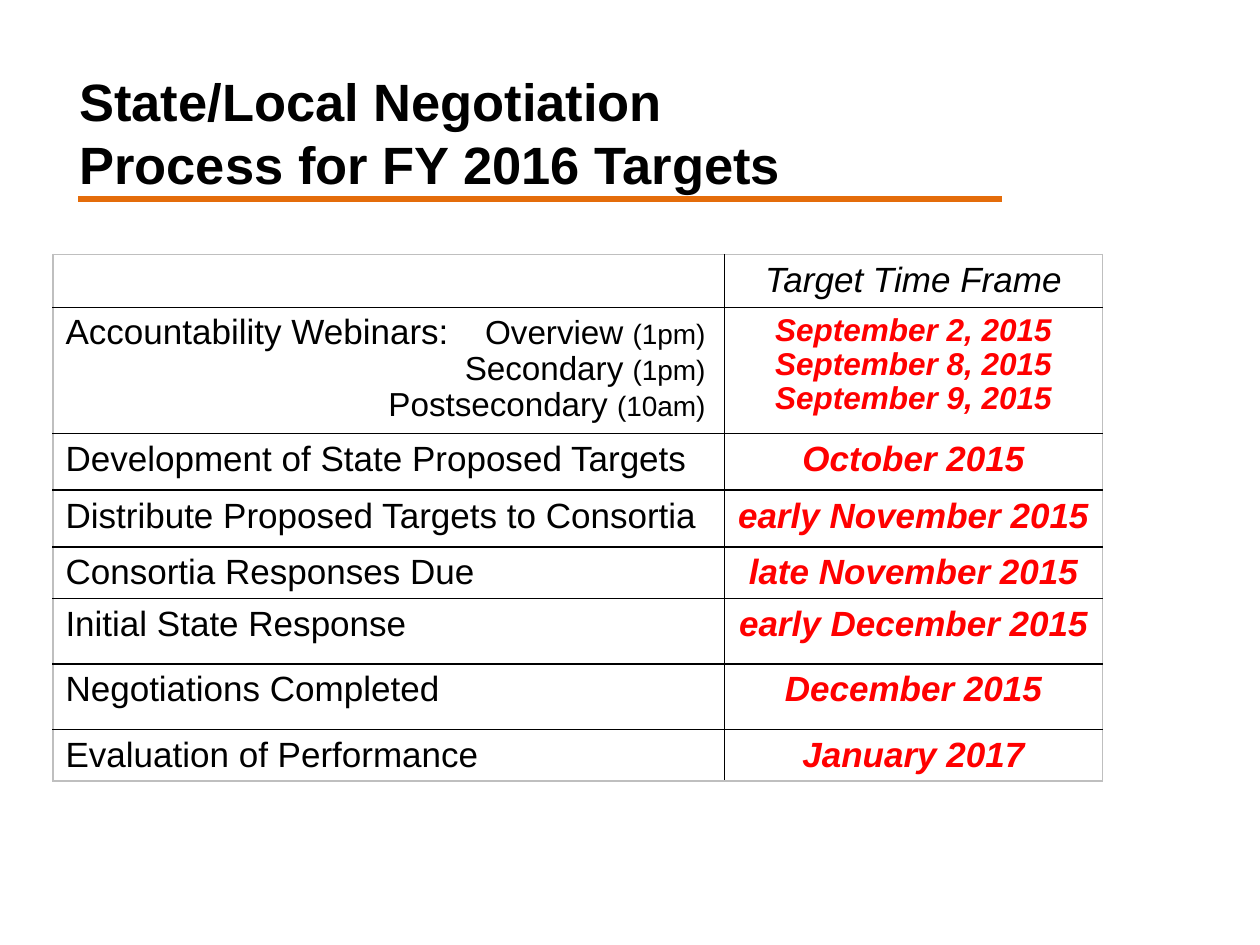
from lxml import etree
from pptx import Presentation
from pptx.dml.color import RGBColor
from pptx.enum.shapes import MSO_CONNECTOR
from pptx.enum.text import MSO_ANCHOR, MSO_AUTO_SIZE, PP_ALIGN
from pptx.oxml.ns import qn
from pptx.util import Inches, Pt

LEFT, CENTER = PP_ALIGN.LEFT, PP_ALIGN.CENTER
FONT = "Arial"
COLORS = {"text": "000000", "date": "FF0000", "rule": "E46C0A",
          "grid": "000000", "frame": "BFBFBF"}

# Content: a paragraph is a list of (text, size) runs
TITLE = ["State/Local Negotiation", "Process for FY 2016 Targets"]
HEADING = "Target Time Frame"
WEBINARS = [
    [("Accountability Webinars:", 20), ("\tOverview ", 19), ("(1pm)", 16)],
    [("\tSecondary ", 19), ("(1pm)", 16)],
    [("\tPostsecondary ", 19), ("(10am)", 16)],
]
WEBINAR_DATES = ["September 2, 2015", "September 8, 2015", "September 9, 2015"]
STEPS = [
    ("Development of State Proposed Targets", "October 2015"),
    ("Distribute Proposed Targets to Consortia", "early November 2015"),
    ("Consortia Responses Due", "late November 2015"),
    ("Initial State Response", "early December 2015"),
    ("Negotiations Completed", "December 2015"),
    ("Evaluation of Performance", "January 2017"),
]
COLUMN_WIDTHS = [5.33, 3]
ROW_HEIGHTS = [0.42, 1, 0.45, 0.45, 0.41, 0.52, 0.52, 0.41]
WEBINAR_TAB = 5.08


def rgb(name):
    return RGBColor.from_string(COLORS[name])


def style(font, size=None, color="text", bold=False, italic=False):
    font.name = FONT
    font.color.rgb = rgb(color)
    font.bold, font.italic = bold, italic
    if size:
        font.size = Pt(size)


def write_lines(text_frame, lines, align, spacing=1.0, **font):
    for index, line in enumerate(lines):
        paragraph = text_frame.paragraphs[0] if index == 0 else text_frame.add_paragraph()
        paragraph.alignment = align
        paragraph.line_spacing = spacing
        paragraph.add_run().text = line
        style(paragraph.font, **font)


def write_webinars(text_frame):
    for index, runs in enumerate(WEBINARS):
        paragraph = text_frame.paragraphs[0] if index == 0 else text_frame.add_paragraph()
        paragraph.line_spacing = 0.97
        tabs = etree.SubElement(paragraph._p.get_or_add_pPr(), qn("a:tabLst"))
        etree.SubElement(tabs, qn("a:tab"), pos=str(Inches(WEBINAR_TAB)), algn="r")
        style(paragraph.font)
        for text, size in runs:
            run = paragraph.add_run()
            run.text = text
            run.font.size = Pt(size)


def set_borders(cell, edges):
    properties = cell._tc.get_or_add_tcPr()
    for index, (tag, color) in enumerate(edges.items()):
        line = etree.Element(qn(f"a:{tag}"), w=str(Pt(1)))
        fill = etree.SubElement(line, qn("a:solidFill"))
        etree.SubElement(fill, qn("a:srgbClr"), val=COLORS[color])
        properties.insert(index, line)


presentation = Presentation()
presentation.slide_width, presentation.slide_height = Inches(10), Inches(7.5)
slide = presentation.slides.add_slide(presentation.slide_layouts[5])

# Title
title = slide.shapes.title
title.left, title.top = Inches(0.53), Inches(0.42)
title.width, title.height = Inches(8.33), Inches(1.25)
title.text_frame.auto_size = MSO_AUTO_SIZE.NONE
title.text_frame.vertical_anchor = MSO_ANCHOR.MIDDLE
write_lines(title.text_frame, TITLE, LEFT, size=30, bold=True)

# Rule under the title
rule = slide.shapes.add_connector(MSO_CONNECTOR.STRAIGHT, Inches(0.62), Inches(1.58),
                                  Inches(7.95), Inches(1.58))
rule.line.color.rgb = rgb("rule")
rule.line.width = Pt(3)
etree.SubElement(rule._element.spPr, qn("a:effectLst"))

# Timeline table
row_count, column_count = len(ROW_HEIGHTS), len(COLUMN_WIDTHS)
table = slide.shapes.add_table(row_count, column_count, Inches(0.42), Inches(2.02),
                               Inches(sum(COLUMN_WIDTHS)), Inches(sum(ROW_HEIGHTS))).table
table.first_row = table.horz_banding = False
for column, width in zip(table.columns, COLUMN_WIDTHS):
    column.width = Inches(width)
for row, height in zip(table.rows, ROW_HEIGHTS):
    row.height = Inches(height)

# Grey outer frame, black inner grid
for r in range(row_count):
    for c in range(column_count):
        cell = table.cell(r, c)
        cell.fill.background()
        set_borders(cell, {
            "lnL": "frame" if c == 0 else "grid",
            "lnR": "frame" if c == column_count - 1 else "grid",
            "lnT": "frame" if r == 0 else "grid",
            "lnB": "frame" if r == row_count - 1 else "grid",
        })

# Cell text
date_font = {"color": "date", "bold": True, "italic": True}
write_lines(table.cell(0, 1).text_frame, [HEADING], CENTER, size=20, italic=True)
write_webinars(table.cell(1, 0).text_frame)
write_lines(table.cell(1, 1).text_frame, WEBINAR_DATES, CENTER, 0.97, size=18, **date_font)
for r, (step, date) in enumerate(STEPS, start=2):
    write_lines(table.cell(r, 0).text_frame, [step], LEFT, size=20)
    write_lines(table.cell(r, 1).text_frame, [date], CENTER, size=20, **date_font)

presentation.save("out.pptx")
